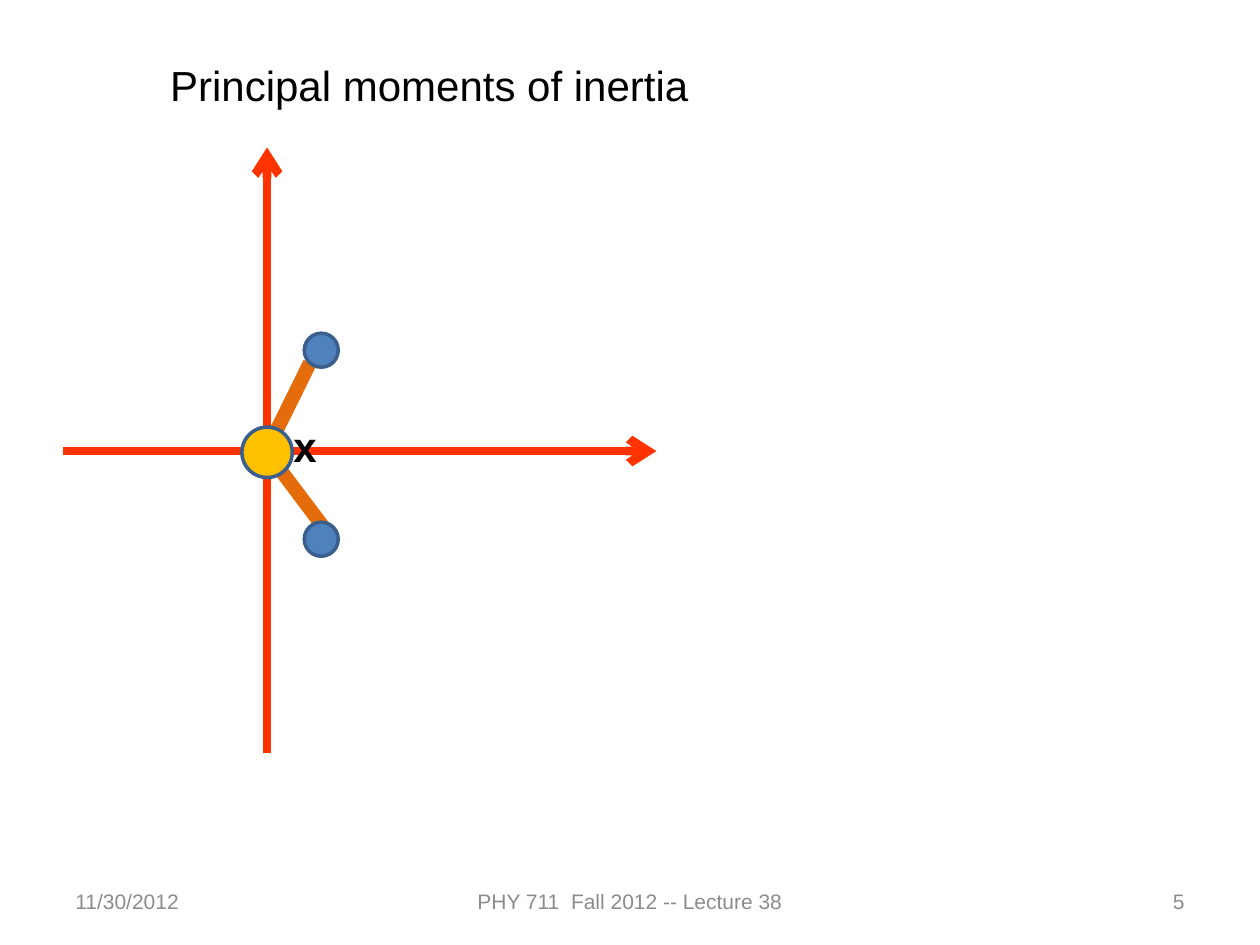
from lxml import etree
from pptx import Presentation
from pptx.dml.color import RGBColor
from pptx.enum import shapes, text
from pptx.oxml import ns
from pptx.util import Inches, Pt

BLACK = RGBColor(0x00, 0x00, 0x00)
GREY = RGBColor(0x8C, 0x8C, 0x8C)
RED = RGBColor(0xFF, 0x33, 0x00)
ORANGE = RGBColor(0xE4, 0x6C, 0x0A)
BLUE = RGBColor(0x4F, 0x81, 0xBD)
NAVY = RGBColor(0x3A, 0x5F, 0x8C)
GOLD = RGBColor(0xFF, 0xC0, 0x00)
ALIGN = text.PP_ALIGN
ANCHOR = text.MSO_ANCHOR


def write(shape, words, size, color, bold=False, align=ALIGN.LEFT,
          anchor=ANCHOR.TOP):
    frame = shape.text_frame
    frame.text = words
    frame.word_wrap = True
    frame.auto_size = text.MSO_AUTO_SIZE.NONE
    frame.vertical_anchor = anchor
    para = frame.paragraphs[0]
    para.alignment = align
    font = para.runs[0].font
    for name, value in {"name": "Arial", "size": Pt(size), "bold": bold}.items():
        setattr(font, name, value)
    font.color.rgb = color


def add_text(slide, box, *args, **style):
    label = slide.shapes.add_textbox(*map(Inches, box))
    write(label, *args, **style)


def add_line(slide, start, end, color, width, arrow=False):
    line = slide.shapes.add_connector(
        shapes.MSO_CONNECTOR.STRAIGHT, *map(Inches, (*start, *end)))
    line.line.color.rgb = color
    line.line.width = Pt(width)
    if arrow:
        etree.SubElement(line.line._get_or_add_ln(), ns.qn("a:tailEnd"),
                         type="arrow")
    etree.SubElement(line._element.spPr, ns.qn("a:effectLst"))


def add_atom(slide, center, size, color):
    x, y = center
    atom = slide.shapes.add_shape(
        shapes.MSO_SHAPE.OVAL,
        *map(Inches, (x - size / 2, y - size / 2, size, size)))
    atom.shadow.inherit = False
    atom.fill.solid()
    atom.fill.fore_color.rgb = color
    atom.line.color.rgb = NAVY
    atom.line.width = Pt(2)


def add_title(slide, box):
    title = slide.shapes.title
    for name, value in zip(("left", "top", "width", "height"), box):
        setattr(title, name, Inches(value))
    write(title, "Principal moments of inertia", 24, BLACK)


def add_model(slide, box):
    left, top, width, height = box
    x, y = left + 1.62, top + 2.41  # origin of the axes

    # Bonds
    add_line(slide, (x + 0.46, y + 0.62), (x, y + 0.01), ORANGE, 8)
    add_line(slide, (x, y - 0.01), (x + 0.34, y - 0.7), ORANGE, 8)

    # Axes
    add_line(slide, (x, top + height), (x, top), RED, 5, arrow=True)
    add_line(slide, (left, y), (left + width, y), RED, 5, arrow=True)

    # Atoms
    for rise in (-0.8, 0.7):
        add_atom(slide, (x + 0.43, y + rise), 0.27, BLUE)
    add_atom(slide, (x, y + 0.01), 0.4, GOLD)

    # Center of mass
    add_text(slide, (x + 0.11, y - 0.29, 0.67, 0.5), "x", 24, BLACK, bold=True)


def add_footer(slide, box):
    left, top, width, height = box
    side, mid = 2.33, 3.17
    parts = (
        ("11/30/2012", left, side, ALIGN.LEFT),
        ("PHY 711  Fall 2012 -- Lecture 38", left + (width - mid) / 2, mid,
         ALIGN.CENTER),
        ("5", left + width - side, side, ALIGN.RIGHT),
    )
    for words, x, wide, align in parts:
        add_text(slide, (x, top, wide, height), words, 12, GREY,
                 align=align, anchor=ANCHOR.MIDDLE)


def main():
    deck = Presentation()
    deck.slide_width, deck.slide_height = Inches(10), Inches(7.5)
    slide = deck.slides.add_slide(deck.slide_layouts[5])
    add_model(slide, (0.5, 1.17, 4.71, 4.81))
    add_title(slide, (1.25, 0.42, 6.67, 0.5))
    add_footer(slide, (0.5, 6.95, 9, 0.4))
    deck.save("out.pptx")


if __name__ == "__main__":
    main()
